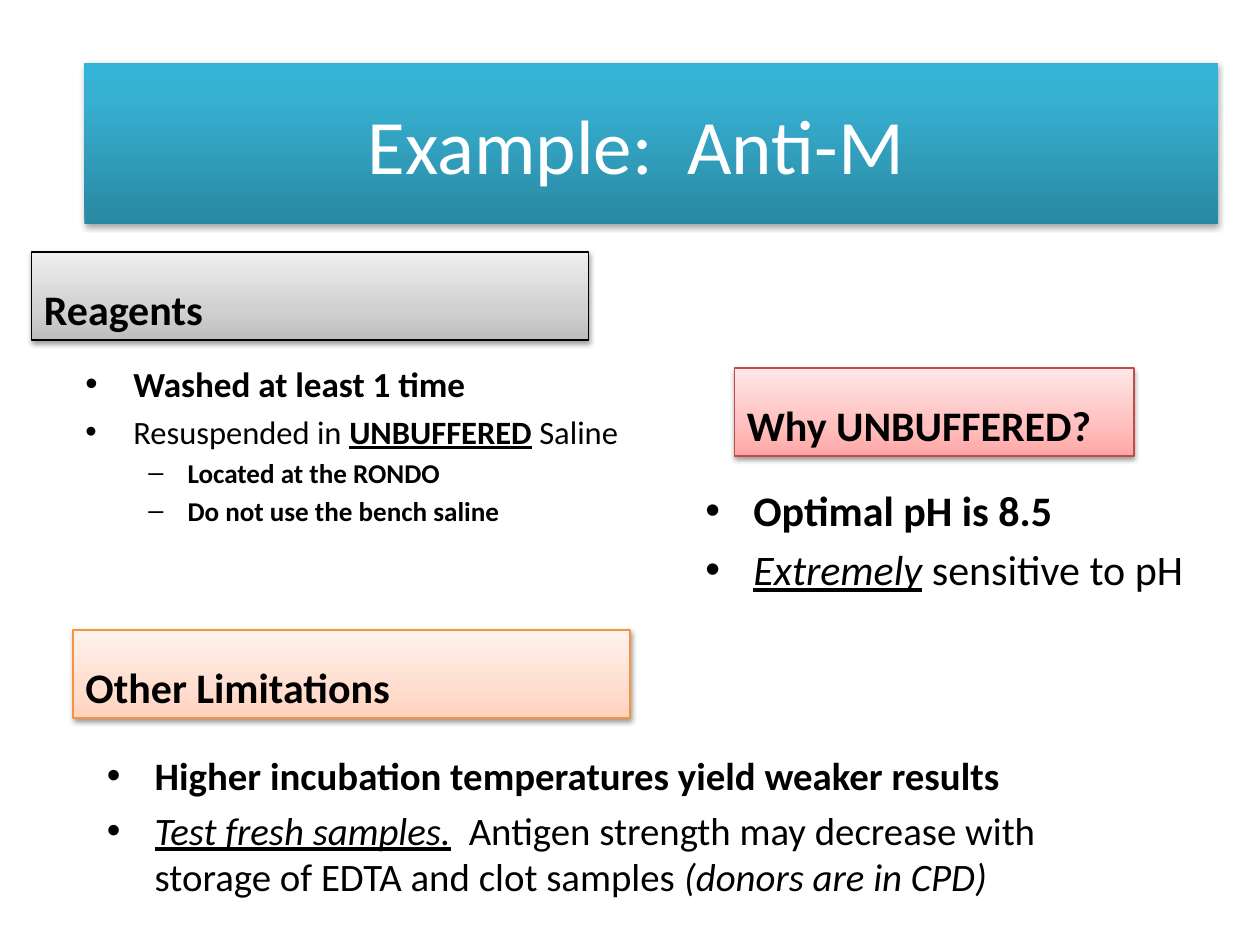
from copy import deepcopy

from lxml import etree
from pptx import Presentation
from pptx.dml.color import RGBColor
from pptx.enum.shapes import MSO_SHAPE
from pptx.enum.text import MSO_ANCHOR, PP_ALIGN
from pptx.oxml.ns import qn
from pptx.util import Inches, Pt

RECTANGLE = MSO_SHAPE.RECTANGLE
MIDDLE, BOTTOM = MSO_ANCHOR.MIDDLE, MSO_ANCHOR.BOTTOM
CENTER, LEFT = PP_ALIGN.CENTER, PP_ALIGN.LEFT

FONT = "Calibri"
BLACK = RGBColor(0x00, 0x00, 0x00)
WHITE = RGBColor(0xFF, 0xFF, 0xFF)
ORANGE_LINE = RGBColor(0xF6, 0x92, 0x40)
RED_LINE = RGBColor(0xBF, 0x4C, 0x48)
# Gradient colours run from the bottom of a band to its top
TEAL = [RGBColor(0x2A, 0x88, 0xA2), RGBColor(0x37, 0xB1, 0xD2), RGBColor(0x34, 0xB4, 0xD6)]
GREY = [RGBColor(0xBD, 0xBD, 0xBD), RGBColor(0xD1, 0xD1, 0xD1), RGBColor(0xEE, 0xEE, 0xEE)]
RED = [RGBColor(0xFF, 0xA6, 0xA5), RGBColor(0xFF, 0xC0, 0xBF), RGBColor(0xFF, 0xE7, 0xE7)]
ORANGE = [RGBColor(0xFF, 0xD2, 0xBD), RGBColor(0xFF, 0xDE, 0xD0), RGBColor(0xFF, 0xF2, 0xED)]

# Bullet sign, left margin and hanging indent for each level
LEVELS = [("•", 0.38, 0.38), ("–", 0.81, 0.31)]


def fill_gradient(shape, colors, middle):
    shape.fill.gradient()
    shape.fill.gradient_angle = 90
    stop_list = shape._element.spPr.find(qn("a:gradFill")).find(qn("a:gsLst"))
    stop_list.append(deepcopy(stop_list[-1]))
    for stop, color, position in zip(shape.fill.gradient_stops, colors, (0, middle, 1)):
        stop.color.rgb = color
        stop.position = position


def add_shadow(shape, opacity, distance):
    shape.shadow.inherit = False
    effects = shape._element.spPr.find(qn("a:effectLst"))
    shadow = etree.SubElement(effects, qn("a:outerShdw"), blurRad=str(Pt(3.1)),
                              dist=str(Pt(distance)), dir="5400000", rotWithShape="0")
    color = etree.SubElement(shadow, qn("a:srgbClr"), val="000000")
    etree.SubElement(color, qn("a:alpha"), val=str(opacity * 1000))


def add_band(page, box, text, colors, middle, opacity, distance):
    """Place a shaded rectangle with one line of text."""
    band = page.shapes.add_shape(RECTANGLE, *map(Inches, box))
    fill_gradient(band, colors, middle)
    add_shadow(band, opacity, distance)
    band.text_frame.word_wrap = True
    para = band.text_frame.paragraphs[0]
    para.add_run().text = text
    para.font.name = FONT
    return band, para


def add_title(page, box, text):
    band, para = add_band(page, box, text, TEAL, 0.8, 35, 1.8)
    band.line.fill.background()
    band.text_frame.vertical_anchor = MIDDLE
    para.alignment = CENTER
    para.font.size = Pt(44)
    para.font.color.rgb = WHITE


def add_heading(page, box, text, colors, line_color):
    band, para = add_band(page, box, text, colors, 0.35, 38, 1.6)
    band.line.color.rgb = line_color
    band.line.width = Pt(0.75)
    band.text_frame.vertical_anchor = BOTTOM
    para.alignment = LEFT
    para.font.size = Pt(24)
    para.font.bold = True
    para.font.color.rgb = BLACK


def set_bullet(para, level):
    sign, margin, hanging = LEVELS[level]
    para.level = level
    properties = para._p.get_or_add_pPr()
    properties.set("marL", str(Inches(margin)))
    properties.set("indent", str(-Inches(hanging)))
    etree.SubElement(properties, qn("a:buFont"), typeface="Arial")
    etree.SubElement(properties, qn("a:buChar"), char=sign)


def add_bullets(page, box, items):
    """Each item is (level, size, spans); a span is (text, style letters b, i, u)."""
    frame = page.shapes.add_textbox(*map(Inches, box)).text_frame
    frame.word_wrap = True
    for index, (level, size, spans) in enumerate(items):
        para = frame.add_paragraph() if index else frame.paragraphs[0]
        set_bullet(para, level)
        if index:
            para.space_before = Pt(round(size * 0.2, 1))
        para.font.name = FONT
        para.font.size = Pt(size)
        para.font.color.rgb = BLACK
        for text, style in spans:
            span = para.add_run()
            span.text = text
            span.font.bold = "b" in style
            span.font.italic = "i" in style
            span.font.underline = "u" in style


def main():
    deck = Presentation()
    deck.slide_width, deck.slide_height = Inches(10), Inches(7.5)
    page = deck.slides.add_slide(deck.slide_layouts[6])

    add_title(page, (0.67, 0.5, 9, 1.28), "Example:  Anti-M\t")

    # Preparation of the cells
    add_heading(page, (0.25, 2, 4.42, 0.7), "Reagents", GREY, BLACK)
    add_bullets(page, (0.58, 2.83, 4.92, 1.25), [
        (0, 20.1, [("Washed at least 1 time", "b")]),
        (0, 18.6, [("Resuspended in ", ""), ("UNBUFFERED", "bu"), (" Saline", "")]),
        (1, 15.5, [("Located at the RONDO", "b")]),
        (1, 15.5, [("Do not use the bench saline", "b")]),
    ])

    # Reason for the saline
    add_heading(page, (5.83, 2.92, 3.17, 0.7), "Why UNBUFFERED?", RED, RED_LINE)
    add_bullets(page, (5.5, 3.8, 4.08, 1.2), [
        (0, 24, [("Optimal pH is 8.5", "b")]),
        (0, 24, [("Extremely", "iu"), (" sensitive to pH", "")]),
    ])

    # Limitations
    add_heading(page, (0.58, 5, 4.42, 0.7), "Other Limitations", ORANGE, ORANGE_LINE)
    add_bullets(page, (0.75, 5.92, 8.5, 1.17), [
        (0, 22.2, [("Higher incubation temperatures yield weaker results", "b")]),
        (0, 22.2, [("Test fresh samples.", "iu"),
                   ("  Antigen strength may decrease with storage of EDTA and clot samples ", ""),
                   ("(donors are in CPD)", "i")]),
    ])

    deck.save("out.pptx")


if __name__ == "__main__":
    main()
